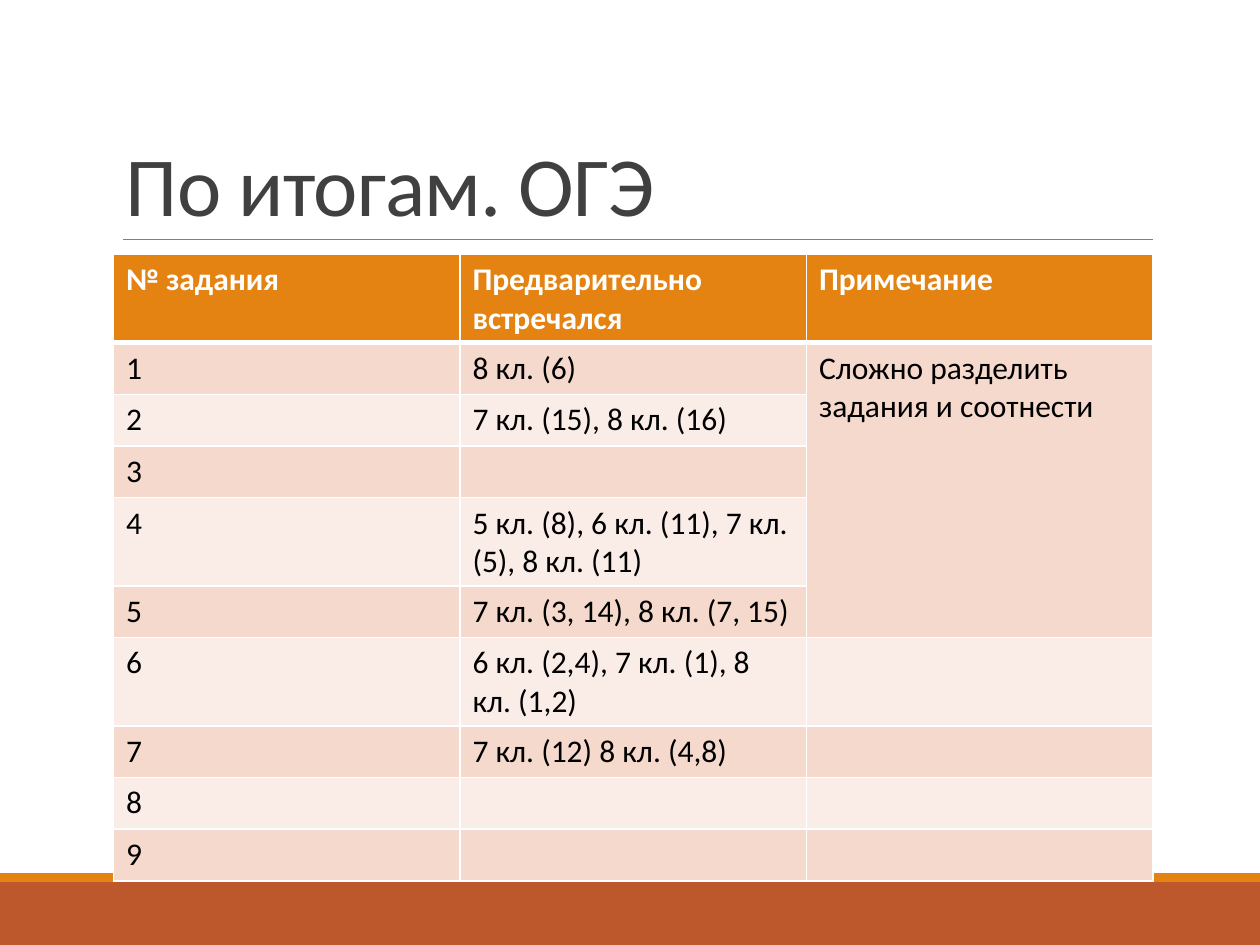
from lxml.etree import SubElement
from pptx import Presentation
from pptx.dml.color import RGBColor
from pptx.enum.shapes import MSO_CONNECTOR, MSO_SHAPE
from pptx.enum.text import MSO_ANCHOR
from pptx.oxml.ns import qn
from pptx.util import Inches, Pt

TITLE = "По итогам. ОГЭ"
HEADERS = ["№ задания", "Предварительно встречался", "Примечание"]
SEEN_BEFORE = [
    "8 кл. (6)",
    "7 кл. (15), 8 кл. (16)",
    "",
    "5 кл. (8), 6 кл. (11), 7 кл. (5), 8 кл. (11)",
    "7 кл. (3, 14), 8 кл. (7, 15)",
    "6 кл. (2,4), 7 кл. (1), 8 кл. (1,2)",
    "7 кл. (12) 8 кл. (4,8)",
    "",
    "",
]
NOTE = "Сложно разделить задания и соотнести"
NOTE_ROWS = 5

FONT = "Calibri"
WHITE = RGBColor(0xFF, 0xFF, 0xFF)
BLACK = RGBColor(0, 0, 0)
DARK = RGBColor(0x40, 0x40, 0x40)
GRAY = RGBColor(0x80, 0x80, 0x80)
ORANGE = RGBColor(0xE4, 0x83, 0x12)
RUST = RGBColor(0xBD, 0x58, 0x2C)
BANDS = [RGBColor(0xF5, 0xD9, 0xCC), RGBColor(0xFA, 0xED, 0xE7)]

LEFT, WIDTH = 0.9, 8.25
ROW_HEIGHT = 0.41


def style_font(font, size, color, bold=False):
    font.name, font.size, font.bold = FONT, Pt(size), bold
    font.color.rgb = color


def add_band(page, top, height, color):
    band = page.shapes.add_shape(
        MSO_SHAPE.RECTANGLE, 0, Inches(top), Inches(10), Inches(height))
    band.shadow.inherit = False
    band.fill.solid()
    band.fill.fore_color.rgb = color
    band.line.fill.background()


def add_title(page):
    box = page.shapes.add_textbox(
        Inches(LEFT), Inches(0.31), Inches(WIDTH), Inches(1.59))
    frame = box.text_frame
    frame.word_wrap = True
    frame.vertical_anchor = MSO_ANCHOR.BOTTOM
    frame.text = TITLE
    para = frame.paragraphs[0]
    para.line_spacing = 0.85
    span = para.runs[0]
    style_font(span.font, 48, DARK)
    span.font._element.set("spc", "-50")


def add_rule(page):
    rule = page.shapes.add_connector(
        MSO_CONNECTOR.STRAIGHT, Inches(0.98), Inches(1.9),
        Inches(LEFT + WIDTH), Inches(1.9))
    rule.line.color.rgb = GRAY
    rule.line.width = Pt(0.5)
    SubElement(rule._element.spPr, qn("a:effectLst"))


def add_borders(cell, widths):
    """Draw white cell borders; widths maps a side (L, R, T, B) to points."""
    props = cell._tc.get_or_add_tcPr()
    for position, (side, width) in enumerate(widths.items()):
        line = props.makeelement(qn(f"a:ln{side}"), {"w": str(Pt(width))})
        fill = SubElement(line, qn("a:solidFill"))
        SubElement(fill, qn("a:srgbClr"), val=str(WHITE))
        props.insert(position, line)


def add_results(page):
    rows = [HEADERS] + [[str(number), seen, NOTE if number == 1 else ""]
                        for number, seen in enumerate(SEEN_BEFORE, 1)]
    table = page.shapes.add_table(
        len(rows), len(HEADERS), Inches(LEFT), Inches(2.02),
        Inches(WIDTH), Inches(ROW_HEIGHT * len(rows))).table
    for r, row in enumerate(rows):
        header = r == 0
        for c, text in enumerate(row):
            cell = table.cell(r, c)
            cell.text = text
            style_font(cell.text_frame.paragraphs[0].font, 18,
                       WHITE if header else BLACK, header)
            for span in cell.text_frame.paragraphs[0].runs:
                style_font(span.font, 18, WHITE if header else BLACK, header)
            cell.fill.solid()
            cell.fill.fore_color.rgb = ORANGE if header else BANDS[(r - 1) % 2]
            add_borders(cell, {"L": 1, "R": 1, "T": 3 if r == 1 else 1,
                               "B": 3 if header else 1})
    # The note covers the first tasks
    table.cell(1, 2).merge(table.cell(NOTE_ROWS, 2))


def main():
    deck = Presentation()
    deck.slide_width, deck.slide_height = Inches(10), Inches(7.5)
    page = deck.slides.add_slide(deck.slide_layouts[6])
    # Footer bands
    add_band(page, 7, 0.5, RUST)
    add_band(page, 6.93, 0.07, ORANGE)
    # Heading and table
    add_rule(page)
    add_title(page)
    add_results(page)
    deck.save("out.pptx")


if __name__ == "__main__":
    main()
